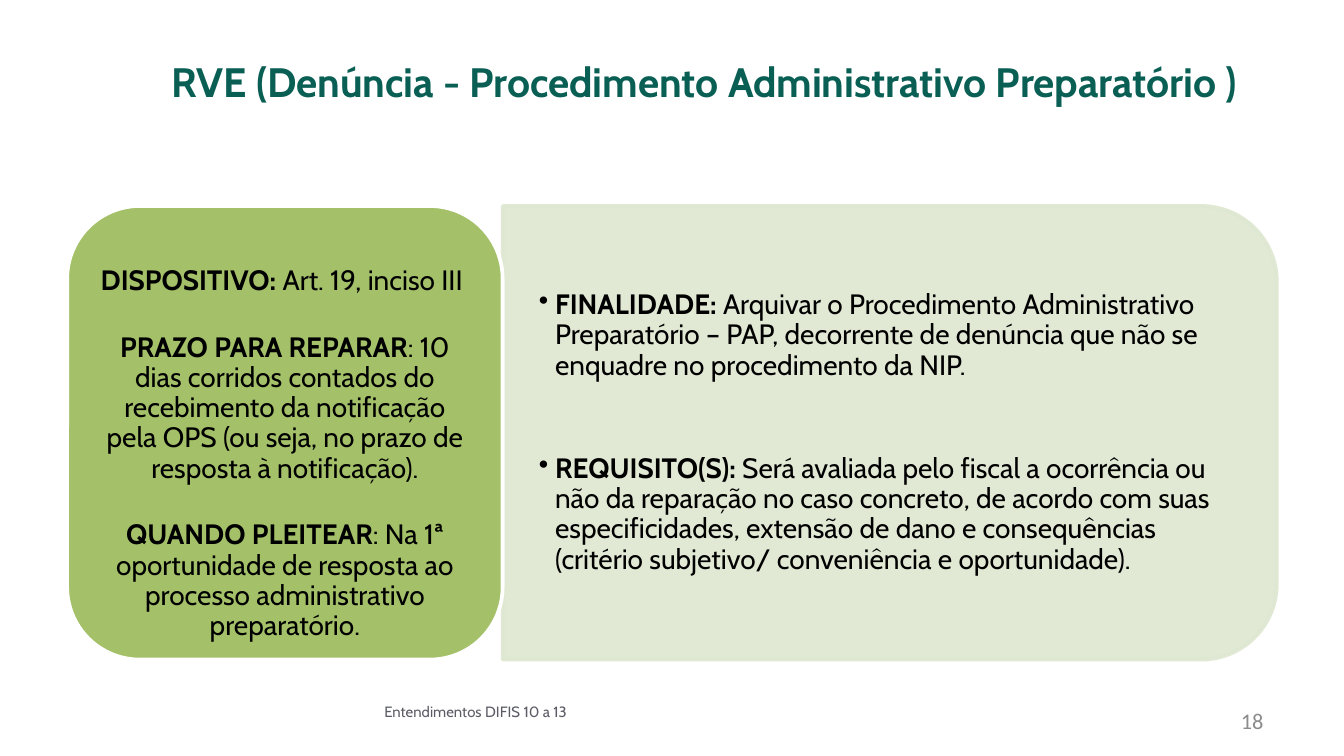
import pptx
import pptx.dml.color
import pptx.enum.shapes
import pptx.enum.text
import pptx.oxml.ns
import pptx.util
import lxml.etree

COLORS = {"title": "0A5F55", "body": "000000", "footer": "5B5C65", "number": "8C8C8C",
          "pale": "DEE7D1", "green": "9BBB59", "white": "FFFFFF"}
ALIGN = pptx.enum.text.PP_ALIGN
ANCHOR = pptx.enum.text.MSO_ANCHOR
SHAPES = pptx.enum.shapes.MSO_SHAPE
qn = pptx.oxml.ns.qn

deck = pptx.Presentation()
deck.slide_width = pptx.util.Inches(10)
deck.slide_height = deck.slide_width * 9 // 16
W, H = deck.slide_width, deck.slide_height
slide = deck.slides.add_slide(deck.slide_layouts[6])

margin = int(W * 0.05)
content_width = W - 2 * margin
card_top, card_height = int(H * 0.2725), int(H * 0.6)
card_width = int(content_width * 0.36)
panel_left, panel_width = margin + card_width, content_width - card_width


def add_panel(kind, left, top, width, height, fill, line, line_opacity):
    panel = slide.shapes.add_shape(kind, left, top, width, height)
    panel.shadow.inherit = False
    panel.fill.solid()
    panel.fill.fore_color.rgb = pptx.dml.color.RGBColor.from_string(COLORS[fill])
    panel.line.color.rgb = pptx.dml.color.RGBColor.from_string(COLORS[line])
    panel.line.width = pptx.util.Pt(2)
    colors = panel.element.spPr.iter(qn("a:srgbClr"))
    for color, opacity in zip(colors, (90, line_opacity)):
        lxml.etree.SubElement(color, qn("a:alpha"), val=str(opacity * 1000))
    return panel


def add_text(left, top, width, height, paragraphs, size, color, align, font="Cabin",
             bold=None, anchor=ANCHOR.MIDDLE, insets=(0.1, 0.05, 0.1, 0.05),
             spacing=None, gap=0, bullet=False):
    frame = slide.shapes.add_textbox(int(left), int(top), int(width), int(height)).text_frame
    frame.word_wrap = True
    frame.vertical_anchor = anchor
    (frame.margin_left, frame.margin_top,
     frame.margin_right, frame.margin_bottom) = map(pptx.util.Inches, insets)
    for index, (label, words) in enumerate(paragraphs):
        paragraph = frame.paragraphs[0] if index == 0 else frame.add_paragraph()
        paragraph.alignment = align
        if spacing:
            paragraph.line_spacing = spacing
        if index:
            paragraph.space_before = pptx.util.Pt(gap)
        if bullet:
            properties = paragraph._p.get_or_add_pPr()
            indent = pptx.util.Inches(0.12)
            properties.set("marL", str(indent))
            properties.set("indent", str(-indent))
            lxml.etree.SubElement(properties, qn("a:buChar"), char="•")
        paragraph.font.size = pptx.util.Pt(size)
        paragraph.font.name = font
        paragraph.font.color.rgb = pptx.dml.color.RGBColor.from_string(COLORS[color])
        paragraph.font.bold = bold
        if label:
            heading = paragraph.add_run()
            heading.text = label
            heading.font.bold = True
        paragraph.add_run().text = words


add_text(margin, H * 0.024, content_width, H * 0.167,
         [("", "RVE (Denúncia - Procedimento Administrativo Preparatório )")],
         22, "title", ALIGN.CENTER, bold=True, insets=(0.58, 0.05, 0.1, 0.05))

purpose_panel = add_panel(SHAPES.ROUND_2_SAME_RECTANGLE,
                          panel_left + (panel_width - card_height) // 2,
                          card_top + (card_height - panel_width) // 2,
                          card_height, panel_width, "pale", "pale", 90)
purpose_panel.rotation = 90

purpose = [
    ("FINALIDADE: ", "Arquivar o Procedimento Administrativo Preparatório – PAP, "
     "decorrente de denúncia que não se enquadre no procedimento da NIP."),
    ("REQUISITO(S): ", "Será avaliada pelo fiscal a ocorrência ou não da reparação no caso "
     "concreto, de acordo com suas especificidades, extensão de dano e consequências "
     "(critério subjetivo/ conveniência e oportunidade)."),
]
add_text(panel_left, card_top + H * 0.03, W * 0.559, card_height - H * 0.06, purpose,
         15, "body", ALIGN.LEFT, insets=(0.27, 0.14, 0.27, 0.14),
         spacing=0.9, gap=39, bullet=True)

add_panel(SHAPES.ROUNDED_RECTANGLE, margin, card_top, card_width, card_height,
          "green", "white", 100)

deadlines = [
    ("DISPOSITIVO: ", "Art. 19, inciso III "),
    ("PRAZO PARA REPARAR", ": 10 dias corridos contados do recebimento da notificação "
     "pela OPS (ou seja, no prazo de resposta à notificação)."),
    ("QUANDO PLEITEAR", ": Na 1ª oportunidade de resposta ao processo administrativo "
     "preparatório."),
]
add_text(margin + W * 0.016, card_top + H * 0.03, card_width - W * 0.032,
         card_height - H * 0.06, deadlines, 15, "body", ALIGN.CENTER,
         anchor=ANCHOR.TOP, insets=(0.06, 0.28, 0.06, 0.03), spacing=0.9, gap=19.5)

add_text(W * 0.717, H * 0.927, W * 0.233, H * 0.053, [("", "18")],
         12, "number", ALIGN.RIGHT, font="Calibri")
add_text(margin, H * 0.915, W * 0.608, H * 0.053, [("", "Entendimentos DIFIS 10 a 13")],
         8, "footer", ALIGN.CENTER)

deck.save("out.pptx")
